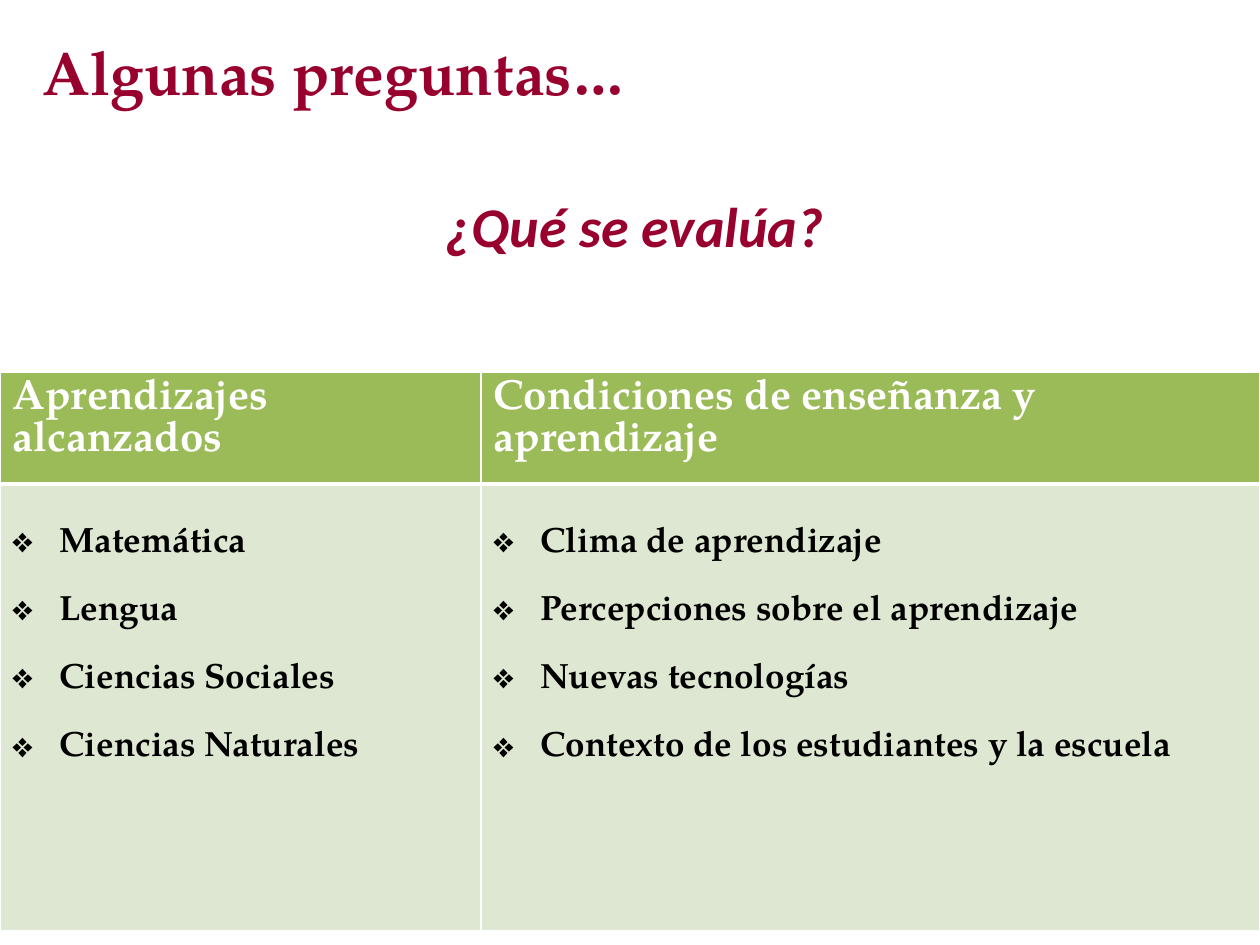
from dataclasses import dataclass

from lxml import etree
from pptx import Presentation
from pptx.dml.color import RGBColor
from pptx.enum import text
from pptx.oxml import ns
from pptx.util import Emu, Pt

EMU_PER_PX = 914400 / 126

CRIMSON = RGBColor(0x98, 0x01, 0x2E)
GREEN = RGBColor(0x9B, 0xBB, 0x59)
PALE_GREEN = RGBColor(0xDE, 0xE7, 0xD1)
WHITE = RGBColor(0xFF, 0xFF, 0xFF)
BLACK = RGBColor(0x00, 0x00, 0x00)

SERIF = "TeX Gyre Pagella"
SANS = "Calibri"


@dataclass(frozen=True)
class Heading:
    words: str
    left: int
    top: int
    width: int
    height: int
    alignment: text.PP_ALIGN
    font: dict
    color: RGBColor = CRIMSON


@dataclass(frozen=True)
class Column:
    title: str
    width: int
    items: tuple[str, ...]


HEADINGS = (
    Heading("Algunas preguntas…", 30, 28, 1196, 87, text.PP_ALIGN.LEFT,
            {"name": SERIF, "size": Pt(35), "bold": True}),
    Heading("¿Qué se evalúa?", 44, 185, 1182, 80, text.PP_ALIGN.CENTER,
            {"name": SANS, "size": Pt(32), "bold": True, "italic": True}),
)

COLUMNS = (
    Column("Aprendizajes alcanzados", 481,
           ("Matemática", "Lengua", "Ciencias Sociales", "Ciencias Naturales")),
    Column("Condiciones de enseñanza y aprendizaje", 779,
           ("Clima de aprendizaje", "Percepciones sobre el aprendizaje",
            "Nuevas tecnologías", "Contexto de los estudiantes y la escuela")),
)

TABLE_TOP = 372
ROW_HEIGHTS = (112, 447)
BODY_MARGIN_TOP = 43
BULLET_INDENT = 47
HEADER_FONT = {"name": SERIF, "size": Pt(24), "bold": True}
ITEM_FONT = {"name": SERIF, "size": Pt(20), "bold": True}
HEADER_FORMAT = {"line_spacing": Pt(24)}
ITEM_FORMAT = {"line_spacing": Pt(19.5), "space_after": Pt(19.5)}
HEADER_BORDERS = {"lnL": 1, "lnR": 1, "lnT": 1, "lnB": 3}
BODY_BORDERS = {"lnL": 1, "lnR": 1, "lnT": 3, "lnB": 1}


def px(length: int) -> Emu:
    return Emu(round(length * EMU_PER_PX))


def apply(target, values: dict) -> None:
    for name, value in values.items():
        setattr(target, name, value)


def write(paragraph, words: str, font: dict, color: RGBColor) -> None:
    run = paragraph.add_run()
    run.text = words
    apply(run.font, font)
    run.font.color.rgb = color


def add_heading(slide, heading: Heading) -> None:
    shape = slide.shapes.add_textbox(px(heading.left), px(heading.top),
                                     px(heading.width), px(heading.height))
    shape.text_frame.word_wrap = True
    paragraph = shape.text_frame.paragraphs[0]
    paragraph.alignment = heading.alignment
    write(paragraph, heading.words, heading.font, heading.color)


def add_bullet(paragraph) -> None:
    properties = paragraph._p.get_or_add_pPr()
    properties.set("marL", str(px(BULLET_INDENT)))
    properties.set("indent", str(-px(BULLET_INDENT)))
    etree.SubElement(properties, ns.qn("a:buChar"), char="❖")


def style_cell(cell, color: RGBColor, borders: dict[str, int]) -> None:
    cell.fill.solid()
    cell.fill.fore_color.rgb = color
    properties = cell._tc.get_or_add_tcPr()
    # Border lines come before the fill in a cell's properties
    for index, (side, points) in enumerate(borders.items()):
        line = etree.Element(ns.qn(f"a:{side}"), w=str(Pt(points)))
        fill = etree.SubElement(line, ns.qn("a:solidFill"))
        etree.SubElement(fill, ns.qn("a:srgbClr"), val=str(WHITE))
        properties.insert(index, line)


def fill_column(header, body, column: Column) -> None:
    style_cell(header, GREEN, HEADER_BORDERS)
    paragraph = header.text_frame.paragraphs[0]
    apply(paragraph, HEADER_FORMAT)
    write(paragraph, column.title, HEADER_FONT, WHITE)

    style_cell(body, PALE_GREEN, BODY_BORDERS)
    body.margin_top = px(BODY_MARGIN_TOP)
    frame = body.text_frame
    for index, item in enumerate(column.items):
        paragraph = frame.add_paragraph() if index else frame.paragraphs[0]
        add_bullet(paragraph)
        apply(paragraph, ITEM_FORMAT)
        write(paragraph, item, ITEM_FONT, BLACK)


def add_evaluation_table(slide) -> None:
    frame = slide.shapes.add_table(
        len(ROW_HEIGHTS), len(COLUMNS), px(0), px(TABLE_TOP),
        px(sum(column.width for column in COLUMNS)), px(sum(ROW_HEIGHTS)))
    table = frame.table
    for row, height in zip(table.rows, ROW_HEIGHTS):
        row.height = px(height)
    for index, column in enumerate(COLUMNS):
        table.columns[index].width = px(column.width)
        fill_column(table.cell(0, index), table.cell(1, index), column)


def main() -> None:
    presentation = Presentation()
    presentation.slide_width = px(1260)
    presentation.slide_height = px(945)
    slide = presentation.slides.add_slide(presentation.slide_layouts[6])

    # Title and question
    for heading in HEADINGS:
        add_heading(slide, heading)

    # What is evaluated
    add_evaluation_table(slide)

    presentation.save("out.pptx")


if __name__ == "__main__":
    main()
